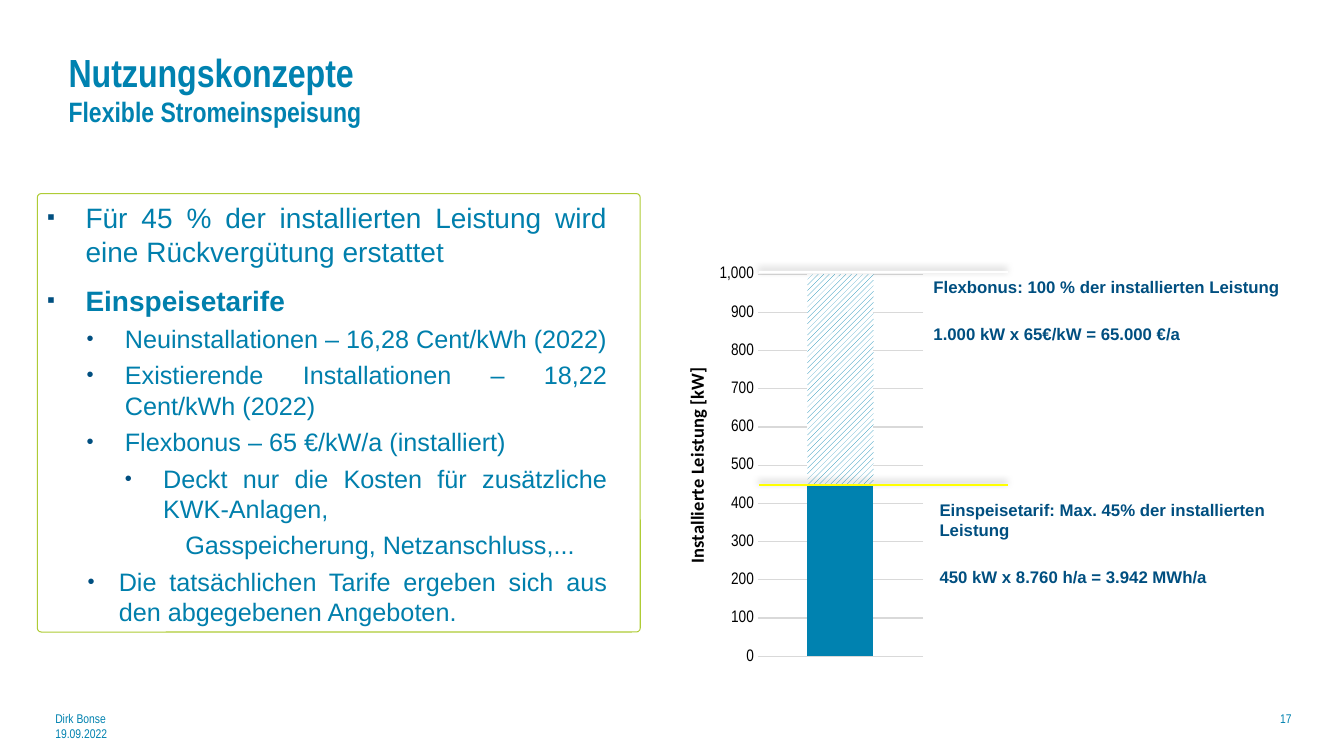
from lxml import etree
from pptx import Presentation
from pptx.chart.data import CategoryChartData
from pptx.dml.color import RGBColor
from pptx.enum.chart import XL_CHART_TYPE, XL_TICK_MARK
from pptx.enum.dml import MSO_PATTERN
from pptx.enum.shapes import MSO_CONNECTOR, MSO_SHAPE
from pptx.enum.text import MSO_ANCHOR, MSO_AUTO_SIZE, PP_ALIGN
from pptx.oxml import parse_xml
from pptx.oxml.ns import nsdecls, qn
from pptx.util import Inches, Pt

COLUMN_STACKED = XL_CHART_TYPE.COLUMN_STACKED
NO_TICK = XL_TICK_MARK.NONE
HATCH = MSO_PATTERN.WIDE_UPWARD_DIAGONAL
STRAIGHT = MSO_CONNECTOR.STRAIGHT
ROUNDED = MSO_SHAPE.ROUNDED_RECTANGLE
MIDDLE = MSO_ANCHOR.MIDDLE
NO_AUTOFIT = MSO_AUTO_SIZE.NONE
LEFT, RIGHT, JUSTIFY = PP_ALIGN.LEFT, PP_ALIGN.RIGHT, PP_ALIGN.JUSTIFY

BLUE = RGBColor(0x00, 0x82, 0xB0)
BODY_BLUE = RGBColor(0x00, 0x7F, 0xAC)
NAVY = RGBColor(0x00, 0x4F, 0x80)
GREEN = RGBColor(0xAF, 0xCC, 0x35)
YELLOW = RGBColor(0xFF, 0xFF, 0x00)
ORANGE = RGBColor(0xFF, 0x66, 0x00)
GRID_GREY = RGBColor(0xD9, 0xD9, 0xD9)
BLACK = RGBColor(0, 0, 0)
WHITE = RGBColor(0xFF, 0xFF, 0xFF)

# text, size, bold, left indent, hanging indent, bullet, space before, space after
TARIFFS = [
    ("Für 45 % der installierten Leistung wird eine Rückvergütung erstattet",
     20, False, 0.38, 0.38, "▪", 0, 6),
    ("Einspeisetarife", 20, True, 0.38, 0.38, "▪", 5, 0),
    ("Neuinstallationen – 16,28 Cent/kWh (2022)", 18, False, 0.77, 0.38, "•", 4.5, 0),
    ("Existierende Installationen – 18,22 Cent/kWh (2022)",
     18, False, 0.77, 0.38, "•", 4.5, 0),
    ("Flexbonus – 65 €/kW/a (installiert)", 18, False, 0.77, 0.38, "•", 4.5, 0),
    ("Deckt nur die Kosten für zusätzliche KWK-Anlagen,",
     18, False, 1.15, 0.38, "•", 4.5, 0),
    ("Gasspeicherung, Netzanschluss,...", 18, False, 1.37, 0, None, 4.5, 0),
    ("Die tatsächlichen Tarife ergeben sich aus den abgegebenen Angeboten.",
     18, False, 0.71, 0.31, "•", 4.5, 0),
]


def style(font, name, size, color, bold=False):
    font.name, font.size, font.bold = name, Pt(size), bold
    font.color.rgb = color


def add_text(slide, box, lines, name, size, color, bold=False, align=LEFT, gap=0):
    frame = slide.shapes.add_textbox(*map(Inches, box)).text_frame
    frame.word_wrap = True
    frame.text = "\n".join(lines)
    for index, paragraph in enumerate(frame.paragraphs):
        paragraph.alignment = align
        if index:
            paragraph.space_before = Pt(gap)
        style(paragraph.runs[0].font, name, size, color, bold)
    return frame


def add_title(slide, box):
    title = slide.shapes.title
    title.left, title.top, title.width, title.height = map(Inches, box)
    frame = title.text_frame
    frame.text = "Nutzungskonzepte\nFlexible Stromeinspeisung"
    frame.vertical_anchor = MIDDLE
    frame.auto_size = NO_AUTOFIT
    for paragraph, size in zip(frame.paragraphs, (28, 20)):
        paragraph.alignment = LEFT
        paragraph.space_before = Pt(0)
        style(paragraph.runs[0].font, "Arial Narrow", size, BLUE, True)


def set_bullet(paragraph, left, hanging, bullet):
    properties = paragraph._p.get_or_add_pPr()
    properties.set("marL", str(Inches(left)))
    properties.set("indent", str(-Inches(hanging)))
    if bullet is None:
        etree.SubElement(properties, qn("a:buNone"))
        return
    color = etree.SubElement(properties, qn("a:buClr"))
    etree.SubElement(color, qn("a:srgbClr"), val=str(NAVY))
    etree.SubElement(properties, qn("a:buSzPct"), val="80000")
    etree.SubElement(properties, qn("a:buFont"), typeface="Arial")
    etree.SubElement(properties, qn("a:buChar"), char=bullet)


def add_tariff_panel(slide, box):
    left, top, width, height = box
    # Frame
    panel = slide.shapes.add_shape(ROUNDED, *map(Inches, box))
    panel.adjustments[0] = 0.009
    panel.shadow.inherit = False
    panel.fill.solid()
    panel.fill.fore_color.rgb = WHITE
    panel.line.color.rgb = GREEN
    panel.line.width = Pt(0.75)
    # Bulleted list
    frame = add_text(slide, (left, top + 0.02, width - 0.23, height + 0.14),
                     [item[0] for item in TARIFFS], "Arial", 18, BODY_BLUE, align=JUSTIFY)
    for paragraph, item in zip(frame.paragraphs, TARIFFS):
        _, size, bold, indent, hanging, bullet, before, after = item
        if before:
            paragraph.space_before = Pt(before)
        paragraph.space_after = Pt(after)
        set_bullet(paragraph, indent, hanging, bullet)
        style(paragraph.runs[0].font, "Arial", size, BODY_BLUE, bold)


def set_plot_layout(chart, x, y, width, height):
    plot_area = chart._chartSpace.chart.plotArea
    for layout in plot_area.findall(qn("c:layout")):
        plot_area.remove(layout)
    plot_area.insert(0, parse_xml(
        f'<c:layout {nsdecls("c")}><c:manualLayout><c:layoutTarget val="inner"/>'
        '<c:xMode val="edge"/><c:yMode val="edge"/>'
        f'<c:x val="{x}"/><c:y val="{y}"/><c:w val="{width}"/><c:h val="{height}"/>'
        '</c:manualLayout></c:layout>'))


def add_power_chart(slide, box):
    data = CategoryChartData()
    data.categories = ["1"]
    data.add_series("Series 1", [450])
    data.add_series("Series 2", [550])
    chart = slide.shapes.add_chart(COLUMN_STACKED, *map(Inches, box), data).chart
    chart.has_legend = False
    chart.has_title = False
    style(chart.font, "Arial Narrow", 10, BLACK)
    set_plot_layout(chart, 0.341, 0.138, 0.659, 0.78)

    # Column
    plot = chart.plots[0]
    plot.gap_width, plot.overlap, plot.vary_by_categories = 150, 100, False
    for series, color in zip(plot.series, (BLUE, ORANGE)):
        series.format.fill.solid()
        series.format.fill.fore_color.rgb = color
    flex_fill = plot.series[1].points[0].format.fill
    flex_fill.patterned()
    flex_fill.pattern = HATCH
    flex_fill.fore_color.rgb = BLUE
    flex_fill.back_color.rgb = WHITE

    # Axes
    chart.category_axis.visible = False
    power = chart.value_axis
    power.minimum_scale, power.maximum_scale, power.major_unit = 0, 1000, 100
    power.major_tick_mark = power.minor_tick_mark = NO_TICK
    power.format.line.fill.background()
    power.major_gridlines.format.line.color.rgb = GRID_GREY
    power.major_gridlines.format.line.width = Pt(0.75)
    power.tick_labels.number_format = "#,##0"
    power.tick_labels.number_format_is_linked = False
    style(power.tick_labels.font, "Arial Narrow", 11.9, BLACK)
    caption = power.axis_title.text_frame
    caption.text = "Installierte Leistung [kW]"
    style(caption.paragraphs[0].runs[0].font, "Calibri", 13.2, BLACK, True)
    body = caption._txBody.find(qn("a:bodyPr"))
    body.set("rot", "-5400000")
    body.set("vert", "horz")


def add_limit_line(slide, left, right, y, color):
    limit = slide.shapes.add_connector(STRAIGHT, *map(Inches, (left, y, right, y)))
    limit.line.color.rgb = color
    limit.line.width = Pt(1)
    limit._element.spPr.append(parse_xml(
        f'<a:effectLst {nsdecls("a")}><a:outerShdw blurRad="{Pt(5)}" dist="{Pt(2)}" '
        f'dir="{245 * 60000}" algn="ctr" rotWithShape="0"><a:srgbClr val="000000">'
        '<a:alpha val="50000"/></a:srgbClr></a:outerShdw></a:effectLst>'))


def add_footer(slide, top):
    add_text(slide, (10.13, top, 2.78, 0.5), ["17"], "Arial Narrow", 9, BLUE, align=RIGHT)
    add_text(slide, (0.45, top, 3.25, 0.5), ["Dirk Bonse", "19.09.2022"],
             "Arial Narrow", 9, BLUE)


def main():
    deck = Presentation()
    deck.slide_width, deck.slide_height = Inches(13.33), Inches(7.5)
    slide = deck.slides.add_slide(deck.slide_layouts[5])
    add_title(slide, (0.58, 0.25, 9.87, 1.25))
    add_tariff_panel(slide, (0.37, 1.92, 5.98, 4.35))
    add_power_chart(slide, (6.67, 2.05, 2.49, 4.86))
    # Limits at 45 % and 100 % of the installed power
    add_limit_line(slide, 7.53, 10, 4.81, YELLOW)
    add_limit_line(slide, 7.53, 10, 2.7, WHITE)
    # Explanations beside the column
    add_text(slide, (9.22, 4.91, 3.9, 1.05),
             ["Einspeisetarif: Max. 45% der installierten Leistung",
              "450 kW x 8.760 h/a = 3.942 MWh/a"], "Arial", 12, NAVY, True, gap=19)
    add_text(slide, (9.16, 2.7, 3.9, 1.05),
             ["Flexbonus: 100 % der installierten Leistung",
              "1.000 kW x 65€/kW = 65.000 €/a"], "Arial", 12, NAVY, True, gap=19)
    add_footer(slide, 7)
    deck.save("out.pptx")


if __name__ == "__main__":
    main()
